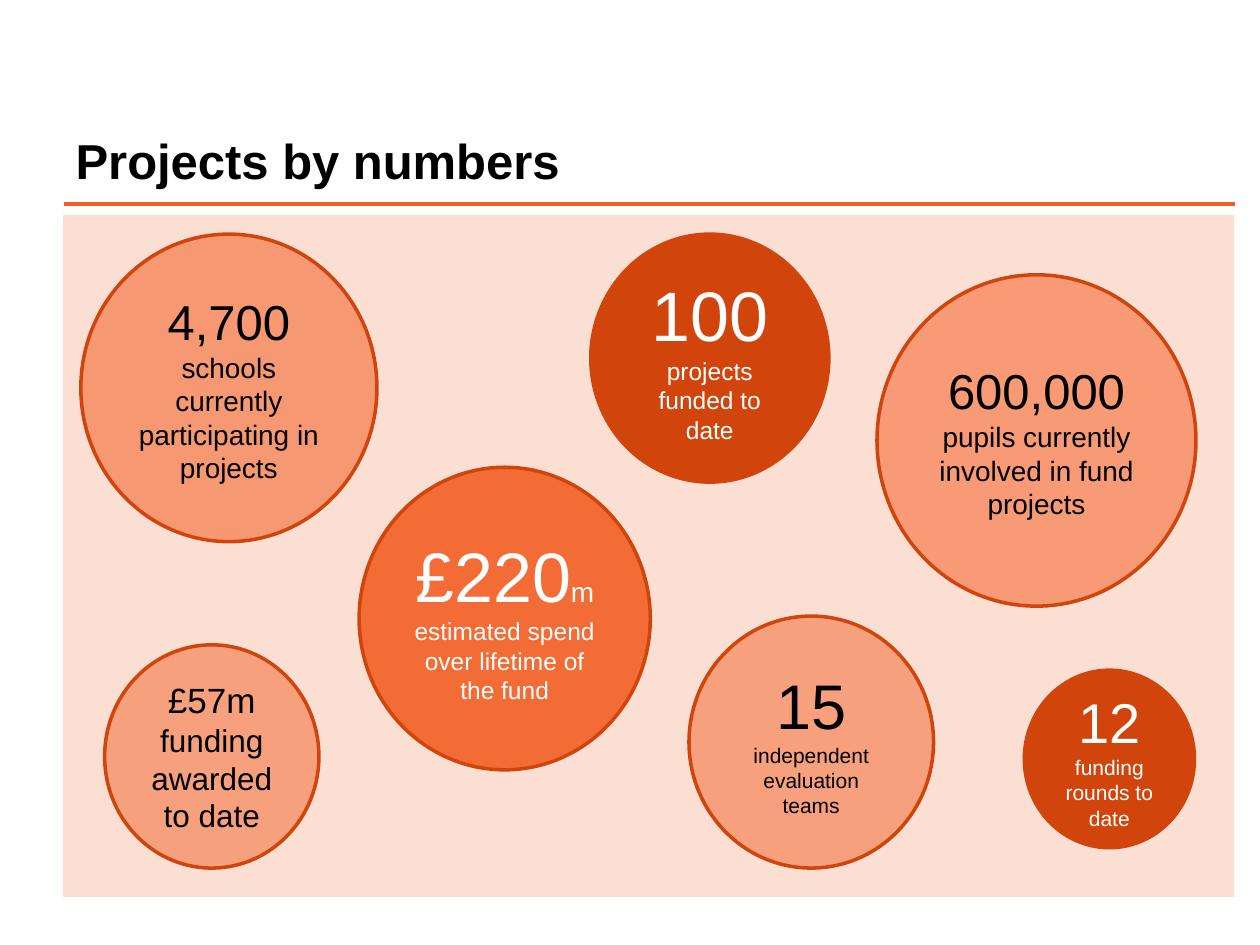
from pptx import Presentation
from pptx.dml.color import RGBColor
from pptx.enum.shapes import MSO_CONNECTOR, MSO_SHAPE
from pptx.enum.text import MSO_ANCHOR as Anchor, PP_ALIGN as Align
from pptx.oxml.ns import qn
from pptx.util import Cm, Pt
from lxml.etree import SubElement

BLACK, WHITE = "000000", "FFFFFF"
RUST, ORANGE, PEACH = "D1450D", "F36B35", "F7A07D"


def rgb(code):
    return RGBColor.from_string(code)


def write(frame, paragraphs, color=BLACK, align=Align.CENTER, anchor=Anchor.MIDDLE, bold=False):
    """Fill a frame with paragraphs of (text, size) runs; a "\n" text is a line break."""
    frame.word_wrap = True
    frame.vertical_anchor = anchor
    for index, runs in enumerate(paragraphs):
        paragraph = frame.add_paragraph() if index else frame.paragraphs[0]
        paragraph.alignment = align
        for text, size in runs:
            if text == "\n":
                paragraph.add_line_break()
                continue
            run = paragraph.add_run()
            run.text = text
            run.font.name = "Arial"
            run.font.size = Pt(size)
            run.font.bold = bold
            run.font.color.rgb = rgb(color)


deck = Presentation()
deck.slide_width, deck.slide_height = Cm(25.4), Cm(19.05)
slide = deck.slides.add_slide(deck.slide_layouts[5])
shapes = slide.shapes

# Heading and the rule under it
heading = shapes.title
heading.left, heading.top, heading.width, heading.height = Cm(1.27), Cm(0.76), Cm(16.23), Cm(3.18)
write(heading.text_frame, [[("Projects by numbers", 28)]],
      align=Align.LEFT, anchor=Anchor.BOTTOM, bold=True)

rule = shapes.add_connector(MSO_CONNECTOR.STRAIGHT, Cm(1.3), Cm(4.11), Cm(24.89), Cm(4.11))
rule.line.color.rgb = rgb("F15D22")
rule.line.width = Pt(2)
SubElement(rule._element.spPr, qn("a:effectLst"))

# Background panel and number bubbles: kind, box in cm, fill, outline, text colour, paragraphs
bubble = MSO_SHAPE.OVAL
figures = [
    (MSO_SHAPE.RECTANGLE, (1.24, 4.29, 23.67, 13.82), "FCDFD3", WHITE, BLACK, []),
    (bubble, (11.91, 4.72, 4.8, 5), RUST, RUST, WHITE,
     [[("100 ", 40), ("projects funded to date", 14)]]),
    (bubble, (1.63, 4.72, 5.97, 6.2), "F69872", RUST, BLACK,
     [[("4,700 ", 28), ("schools currently participating in projects", 16)]]),
    (bubble, (13.89, 12.42, 4.93, 5.08), PEACH, RUST, BLACK,
     [[("15", 36), (" ", 18), ("independent evaluation teams", 12)]]),
    (bubble, (17.68, 5.54, 6.43, 6.68), "F79A75", RUST, BLACK,
     [[("600,000", 28), (" ", 14), ("pupils currently involved in fund projects", 16)]]),
    (bubble, (7.24, 9.42, 5.87, 6.1), ORANGE, RUST, WHITE,
     [[("£220", 40), ("m", 16), ("\n", 16), ("estimated spend over lifetime of the fund", 14)]]),
    (bubble, (20.65, 13.51, 3.43, 3.58), RUST, RUST, WHITE,
     [[("12", 32), (" ", 18), ("funding rounds to date", 12)]]),
    (bubble, (2.11, 13, 4.32, 4.5), PEACH, RUST, BLACK,
     [[("£57m", 20)], [("funding awarded to date", 18)]]),
]
for kind, box, fill, outline, text_color, paragraphs in figures:
    figure = shapes.add_shape(kind, *(Cm(length) for length in box))
    figure.shadow.inherit = False
    figure.fill.solid()
    figure.fill.fore_color.rgb = rgb(fill)
    figure.line.color.rgb = rgb(outline)
    figure.line.width = Pt(2)
    write(figure.text_frame, paragraphs, color=text_color)

deck.save("out.pptx")
